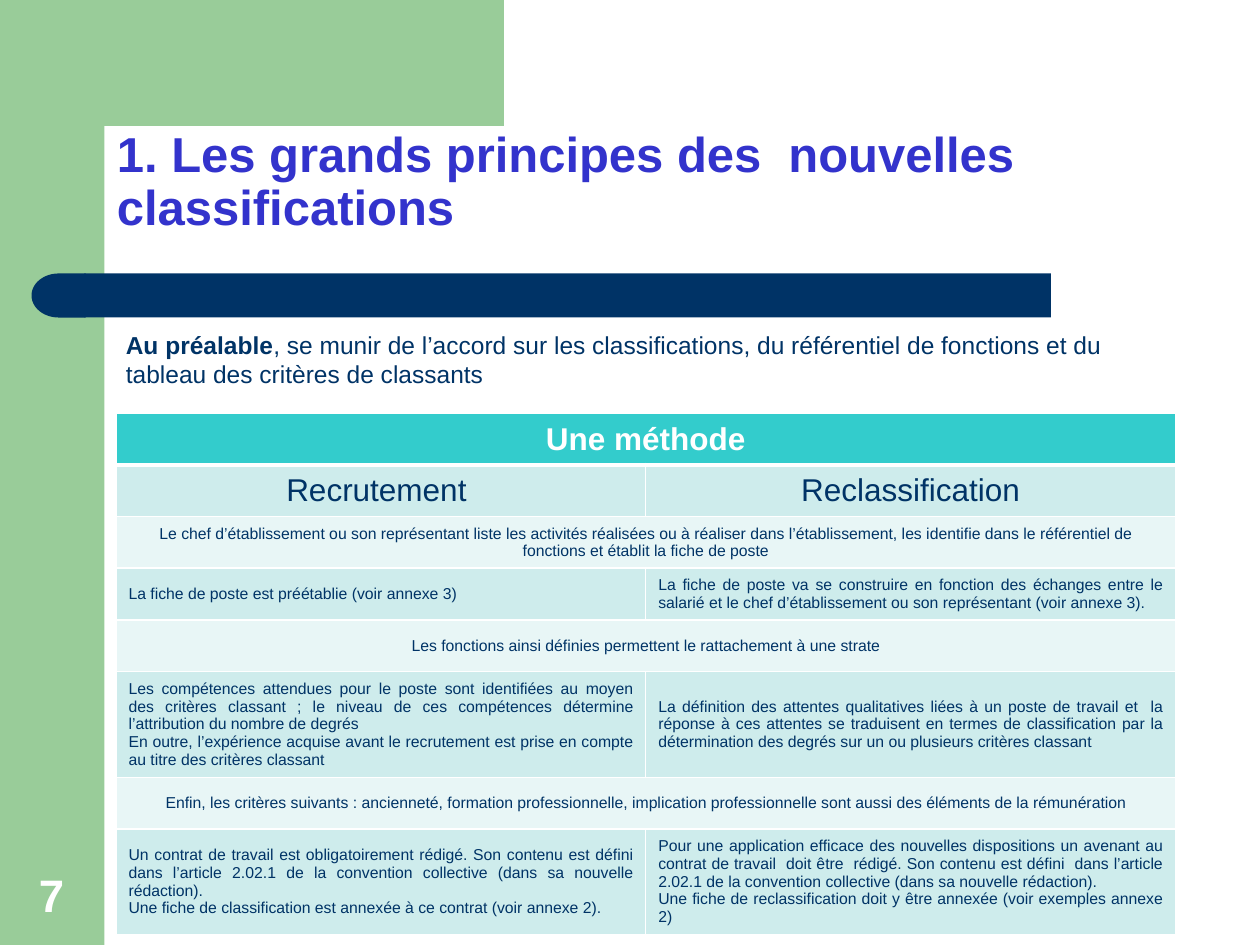
import math

import pptx
import pptx.dml.color
import pptx.enum.shapes
import pptx.enum.text
import pptx.oxml
import pptx.oxml.ns
import pptx.util

Inches = pptx.util.Inches
RGBColor = pptx.dml.color.RGBColor
SHAPE = pptx.enum.shapes.MSO_SHAPE
ALIGN = pptx.enum.text.PP_ALIGN
ANCHOR = pptx.enum.text.MSO_ANCHOR

GREEN = RGBColor(0x99, 0xCC, 0x99)
NAVY = RGBColor(0x00, 0x33, 0x66)
VIOLET = RGBColor(0x33, 0x33, 0xCC)
TURQUOISE = RGBColor(0x33, 0xCC, 0xCC)
AQUA = RGBColor(0xCE, 0xEC, 0xEC)
PALE_AQUA = RGBColor(0xE8, 0xF6, 0xF6)
WHITE = RGBColor(0xFF, 0xFF, 0xFF)

TITLE = "1. Les grands principes des  nouvelles classifications"
PAGE_NUMBER = "7"
INTRO = [
    ("Au préalable", True),
    (", se munir de l’accord sur les classifications, du référentiel de fonctions "
     "et du tableau des critères de classants", False),
]

# One entry per row: a single cell spans both columns; a cell is a list of paragraphs.
METHOD_ROWS = [
    [["Une méthode"]],
    [["Recrutement "], ["Reclassification"]],
    [["Le chef d’établissement ou son représentant liste les activités réalisées ou à "
      "réaliser dans l’établissement, les identifie dans le référentiel de fonctions et "
      "établit la fiche de poste"]],
    [["La fiche de poste est préétablie (voir annexe 3)"],
     ["La fiche de poste va se construire en fonction des échanges entre le salarié et le "
      "chef d’établissement ou son représentant (voir annexe 3)."]],
    [["Les fonctions ainsi définies permettent le rattachement à une strate"]],
    [["Les compétences attendues pour le poste sont identifiées au moyen des critères "
      "classant ; le niveau de ces compétences détermine l’attribution du nombre de degrés",
      "En outre, l’expérience acquise avant le recrutement est prise en compte au titre des "
      "critères classant"],
     ["La définition des attentes qualitatives liées à un poste de travail et  la réponse à "
      "ces attentes se traduisent en termes de classification par la détermination des "
      "degrés sur un ou plusieurs critères classant"]],
    [["Enfin, les critères suivants : ancienneté, formation professionnelle, implication "
      "professionnelle sont aussi des éléments de la rémunération"]],
    [["Un contrat de travail est obligatoirement rédigé. Son contenu est défini dans "
      "l’article 2.02.1 de la convention collective (dans sa nouvelle rédaction).",
      "Une fiche de classification est annexée à ce contrat (voir annexe 2)."],
     ["Pour une application efficace des nouvelles dispositions un avenant au contrat de "
      "travail  doit être  rédigé. Son contenu est défini  dans l’article 2.02.1 de la "
      "convention collective (dans sa nouvelle rédaction). ",
      "Une fiche de reclassification doit y être annexée (voir exemples annexe 2)"]],
]
TABLE_BOX = (0.92, 3.28, 8.41, 4.14)
ROW_HEIGHT, TALL_ROW_HEIGHT = 0.41, 0.84


def write(frame, paragraphs, size, color, bold=False, align=ALIGN.LEFT, spacing=None):
    """Fill a text frame; a paragraph is a string or a list of (text, bold) runs."""
    frame.word_wrap = True
    for index, content in enumerate(paragraphs):
        paragraph = frame.add_paragraph() if index else frame.paragraphs[0]
        paragraph.alignment = align
        if spacing:
            paragraph.line_spacing = spacing
        runs = [(content, bold)] if isinstance(content, str) else content
        for text, run_bold in runs:
            run = paragraph.add_run()
            run.text = text
            run.font.name = "Arial"
            run.font.size = pptx.util.Pt(size)
            run.font.bold = run_bold
            run.font.color.rgb = color


def add_text(slide, box, paragraphs, anchor=ANCHOR.TOP, **text_format):
    frame = slide.shapes.add_textbox(*map(Inches, box)).text_frame
    frame.vertical_anchor = anchor
    write(frame, paragraphs, **text_format)


def paint(shape, color):
    shape.fill.solid()
    shape.fill.fore_color.rgb = color
    shape.line.fill.background()
    shape.shadow.inherit = False


def add_block(slide, kind, box, color):
    block = slide.shapes.add_shape(kind, *map(Inches, box))
    paint(block, color)
    return block


def add_corner(slide):
    """Green top band whose inner corner is a quarter circle."""
    inner_x, inner_y, radius, steps = 0.83, 0.83, 0.32, 16
    arc = []
    for step in range(steps + 1):
        angle = math.pi / 2 * step / steps
        arc.append((inner_x + radius * (1 - math.sin(angle)),
                    inner_y + radius * (1 - math.cos(angle))))
    outline = [(3.5, inner_y), *arc, (inner_x, 1.28), (0.5, 1.28), (0.5, 0)]
    builder = slide.shapes.build_freeform(3.5, 0, scale=Inches(1))
    builder.add_line_segments(outline, close=True)
    paint(builder.convert_to_shape(), GREEN)


def set_borders(cell, bottom_width):
    properties = cell._tc.get_or_add_tcPr()
    for side, width in (("L", 1), ("R", 1), ("T", 1), ("B", bottom_width)):
        properties.append(pptx.oxml.parse_xml(
            f'<a:ln{side} {pptx.oxml.ns.nsdecls("a")} w="{pptx.util.Pt(width)}">'
            f'<a:solidFill><a:srgbClr val="{WHITE}"/></a:solidFill></a:ln{side}>'))


def add_method_table(slide):
    table = slide.shapes.add_table(len(METHOD_ROWS), 2, *map(Inches, TABLE_BOX)).table
    for row_index, contents in enumerate(METHOD_ROWS):
        tall = any(len(paragraphs) > 1 for paragraphs in contents)
        table.rows[row_index].height = Inches(TALL_ROW_HEIGHT if tall else ROW_HEIGHT)
        header = row_index == 0
        spanning = len(contents) == 1
        fill = TURQUOISE if header else PALE_AQUA if spanning else AQUA
        for column in range(2):
            cell = table.cell(row_index, column)
            set_borders(cell, 3 if header else 1)
            cell.fill.solid()
            cell.fill.fore_color.rgb = fill
            cell.vertical_anchor = ANCHOR.MIDDLE
        if spanning:
            table.cell(row_index, 0).merge(table.cell(row_index, 1))
        heading = row_index < 2
        for column, paragraphs in enumerate(contents):
            write(table.cell(row_index, column).text_frame, paragraphs,
                  size=18 if heading else 9, color=WHITE if header else NAVY, bold=header,
                  align=ALIGN.CENTER if heading or spanning else ALIGN.JUSTIFY)


def main():
    deck = pptx.Presentation()
    deck.slide_width, deck.slide_height = Inches(10), Inches(7.5)
    slide = deck.slides.add_slide(deck.slide_layouts[6])

    add_block(slide, SHAPE.RECTANGLE, (0, 0, 0.83, 7.5), GREEN)
    add_corner(slide)
    add_block(slide, SHAPE.RECTANGLE, (0.67, 2.17, 7.67, 0.35), NAVY)
    bar_cap = add_block(slide, SHAPE.FLOWCHART_DELAY, (0.25, 2.17, 0.43, 0.35), NAVY)
    bar_cap.rotation = 180

    add_method_table(slide)
    add_text(slide, (0.09, 6.83, 0.64, 0.53), [PAGE_NUMBER], anchor=ANCHOR.BOTTOM,
             size=26, color=WHITE, bold=True, align=ALIGN.CENTER)
    add_text(slide, (0.83, 0.83, 8.67, 1.25), [TITLE], anchor=ANCHOR.MIDDLE,
             size=28, color=VIOLET, bold=True, spacing=0.9)
    add_text(slide, (0.9, 2.57, 8.35, 0.57), [INTRO], size=14, color=NAVY)
    deck.save("out.pptx")


if __name__ == "__main__":
    main()
